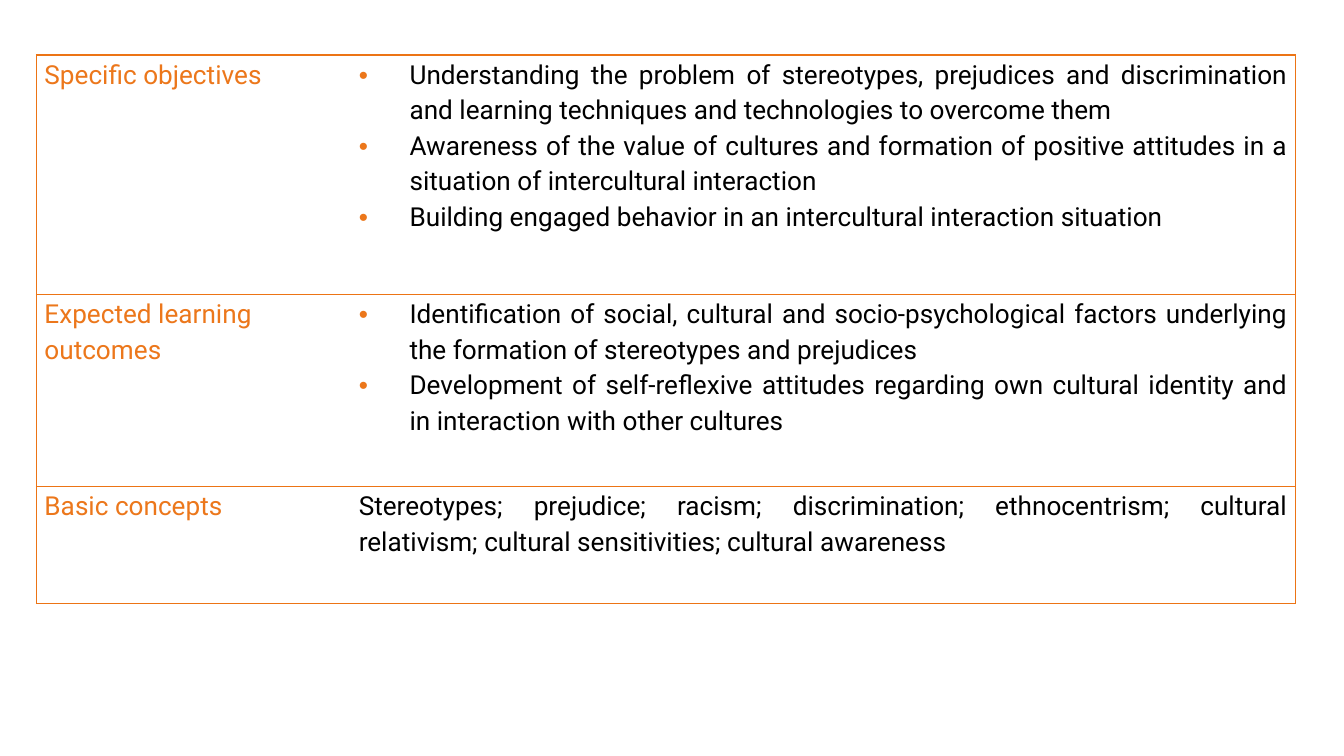
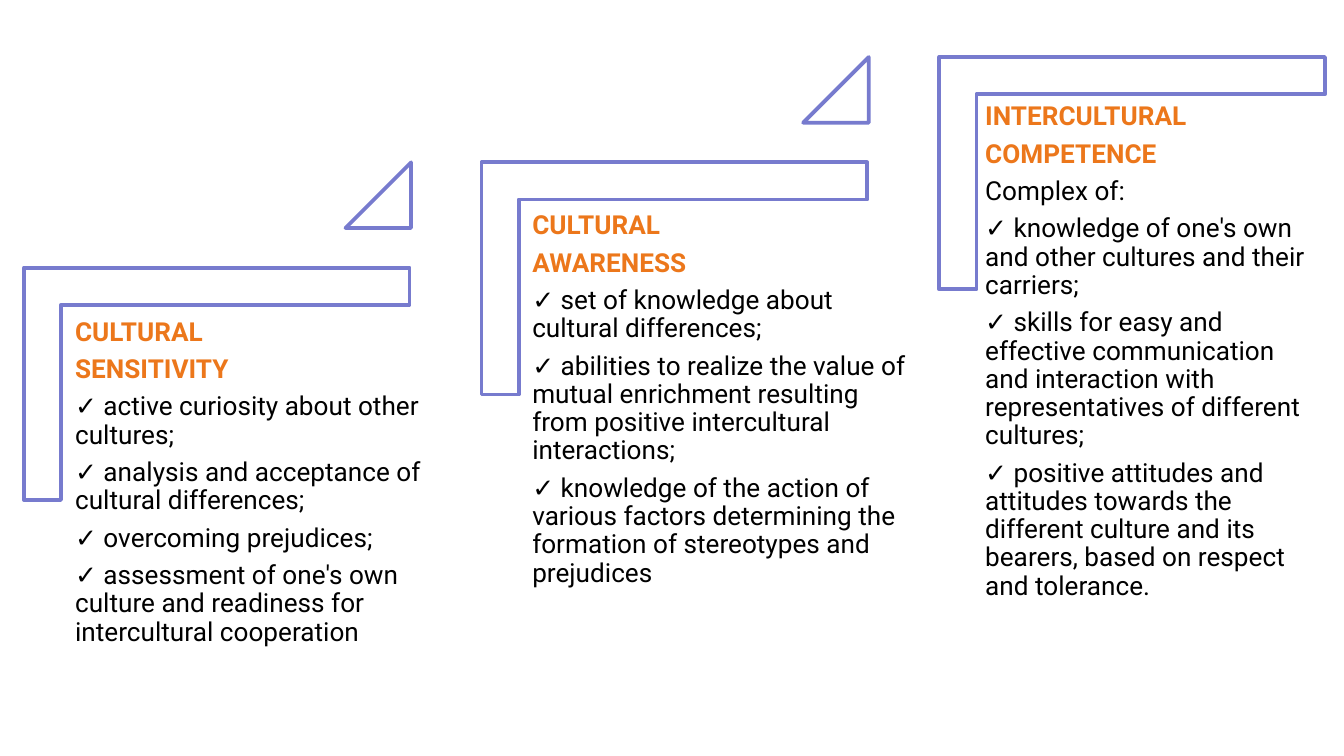
import pptx
import pptx.util
import pptx.dml.color
import pptx.enum.shapes
import pptx.enum.text
import pptx.oxml
import pptx.oxml.ns

Cm, Pt = pptx.util.Cm, pptx.util.Pt
RGBColor = pptx.dml.color.RGBColor
Shape = pptx.enum.shapes.MSO_SHAPE
Align = pptx.enum.text.PP_ALIGN

# Shared look
FONT = "Roboto"
SIZE = 14
ORANGE = RGBColor(0xEC, 0x77, 0x1B)
RULE = RGBColor(0xEC, 0x74, 0x15)
VIOLET = RGBColor(0x77, 0x7B, 0xCE)
BLACK = RGBColor(0, 0, 0)
WHITE = RGBColor(255, 255, 255)
INSET = Cm(0.15)

# Table: label, row height in cm, bulleted, paragraphs
ROWS = [
    ("Specific objectives", 4.53, True, [
        "Understanding the problem of stereotypes, prejudices and discrimination "
        "and learning techniques and technologies to overcome them",
        "Awareness of the value of cultures and formation of positive attitudes "
        "in a situation of intercultural interaction",
        "Building engaged behavior in an intercultural interaction situation",
    ]),
    ("Expected learning outcomes", 3.63, True, [
        "Identification of social, cultural and socio-psychological factors "
        "underlying the formation of stereotypes and prejudices",
        "Development of self-reflexive attitudes regarding own cultural identity "
        "and in interaction with other cultures",
    ]),
    ("Basic concepts", 2.2, False, [
        "Stereotypes; prejudice; racism; discrimination; ethnocentrism; cultural "
        "relativism; cultural sensitivities; cultural awareness",
    ]),
]
COLS = (5.94, 17.86)

# Steps: text box (left, top, width) in cm, heading lines, body lines
STEPS = [
    ((1.27, 5.87, 7.75), ["CULTURAL", "SENSITIVITY"], [
        "✓ active curiosity about other cultures;",
        "✓ analysis and acceptance of cultural differences;",
        "✓ overcoming prejudices;",
        "✓ assessment of one's own culture and readiness for intercultural cooperation",
    ]),
    ((9.91, 3.86, 7.62), ["CULTURAL", "AWARENESS"], [
        "✓ set of knowledge about cultural differences;",
        "✓ abilities to realize the value of mutual enrichment resulting from "
        "positive intercultural interactions;",
        "✓ knowledge of the action of various factors determining the formation "
        "of stereotypes and prejudices",
    ]),
    ((18.47, 1.8, 6.58), ["INTERCULTURAL", "COMPETENCE"], [
        "Complex of:",
        "✓ knowledge of one's own and other cultures and their carriers;",
        "✓ skills for easy and effective communication and interaction with "
        "representatives of different cultures;",
        "✓ positive attitudes and attitudes towards the different culture and "
        "its bearers, based on respect and tolerance.",
    ]),
]
PITCH, RISE = 8.65, 1.99


def write(frame, text, first=False, color=BLACK, bold=False, align=Align.LEFT,
          lines=1.0, after=0, bullet=False):
    """Write one paragraph into a text frame."""
    para = frame.paragraphs[0] if first else frame.add_paragraph()
    if bullet:
        props = para._p.get_or_add_pPr()
        props.set("marL", str(Cm(0.96)))
        props.set("indent", str(-Cm(0.96)))
        space = pptx.oxml.ns.nsdecls("a")
        for xml in (f'<a:buClr {space}><a:srgbClr val="{ORANGE}"/></a:buClr>',
                    f'<a:buFont {space} typeface="Arial"/>',
                    f'<a:buChar {space} char="•"/>'):
            props.append(pptx.oxml.parse_xml(xml))
    para.alignment = align
    para.line_spacing = lines
    para.space_after = Pt(after)
    run = para.add_run()
    run.text = text
    run.font.name, run.font.size = FONT, Pt(SIZE)
    run.font.bold, run.font.color.rgb = bold, color


def border(cell, sides):
    """Rule the named sides of a cell and clear the rest."""
    props = cell._tc.get_or_add_tcPr()
    for place, side in enumerate("LRTB"):
        fill = (f'<a:solidFill><a:srgbClr val="{RULE}"/></a:solidFill>'
                if side in sides else "<a:noFill/>")
        props.insert(place, pptx.oxml.parse_xml(
            f'<a:ln{side} {pptx.oxml.ns.nsdecls("a")} w="{Pt(0.75)}">{fill}</a:ln{side}>'))


def goals(slide):
    high = sum(row[1] for row in ROWS)
    table = slide.shapes.add_table(len(ROWS), len(COLS), Cm(0.69), Cm(1.04),
                                   Cm(sum(COLS)), Cm(high)).table
    table.first_row = table.horz_banding = False
    for col, width in zip(table.columns, COLS):
        col.width = Cm(width)
    for row, (label, height, bullet, texts) in zip(table.rows, ROWS):
        row.height = Cm(height)
        left, right = row.cells
        for cell, sides in ((left, "LTB"), (right, "RTB")):
            cell.fill.background()
            cell.margin_left = cell.margin_right = INSET
            cell.margin_top = cell.margin_bottom = 0
            border(cell, sides)
        write(left.text_frame, label, first=True, color=ORANGE, lines=1.15)
        for i, text in enumerate(texts):
            write(right.text_frame, text, first=i == 0, align=Align.JUSTIFY,
                  lines=1.15, bullet=bullet)


def outline(slide, kind, left, top, width, height, adjust):
    shape = slide.shapes.add_shape(kind, Cm(left), Cm(top), Cm(width), Cm(height))
    shape.shadow.inherit = False
    shape.fill.solid()
    shape.fill.fore_color.rgb = WHITE
    shape.line.color.rgb, shape.line.width = VIOLET, Pt(2)
    for i, value in enumerate(adjust):
        shape.adjustments[i] = value
    return shape


def stairs(slide):
    for i, ((left, top, width), head, body) in enumerate(STEPS):
        right, up = i * PITCH, i * RISE
        corner = outline(slide, Shape.CORNER, 1.9 + right, 3.61 - up,
                         4.39, 7.29, (0.16, 0.16))
        corner.rotation = 90
        box = slide.shapes.add_textbox(Cm(left), Cm(top), Cm(width), Cm(5.77))
        frame = box.text_frame
        frame.word_wrap = True
        frame.margin_left = frame.margin_right = INSET
        frame.margin_top = frame.margin_bottom = INSET
        for j, text in enumerate(head + body):
            title = j < len(head)
            write(frame, text, first=j == 0, color=ORANGE if title else BLACK,
                  bold=title, lines=0.9, after=4.9)
        # A triangle leads up to the next step
        if i < len(STEPS) - 1:
            outline(slide, Shape.ISOSCELES_TRIANGLE, 6.53 + right, 3.07 - up,
                    1.24, 1.24, (1,))


def main():
    deck = pptx.Presentation()
    deck.slide_width, deck.slide_height = Cm(25.4), Cm(14.29)
    for build in (goals, stairs):
        build(deck.slides.add_slide(deck.slide_layouts[6]))
    deck.save("out.pptx")


if __name__ == "__main__":
    main()
